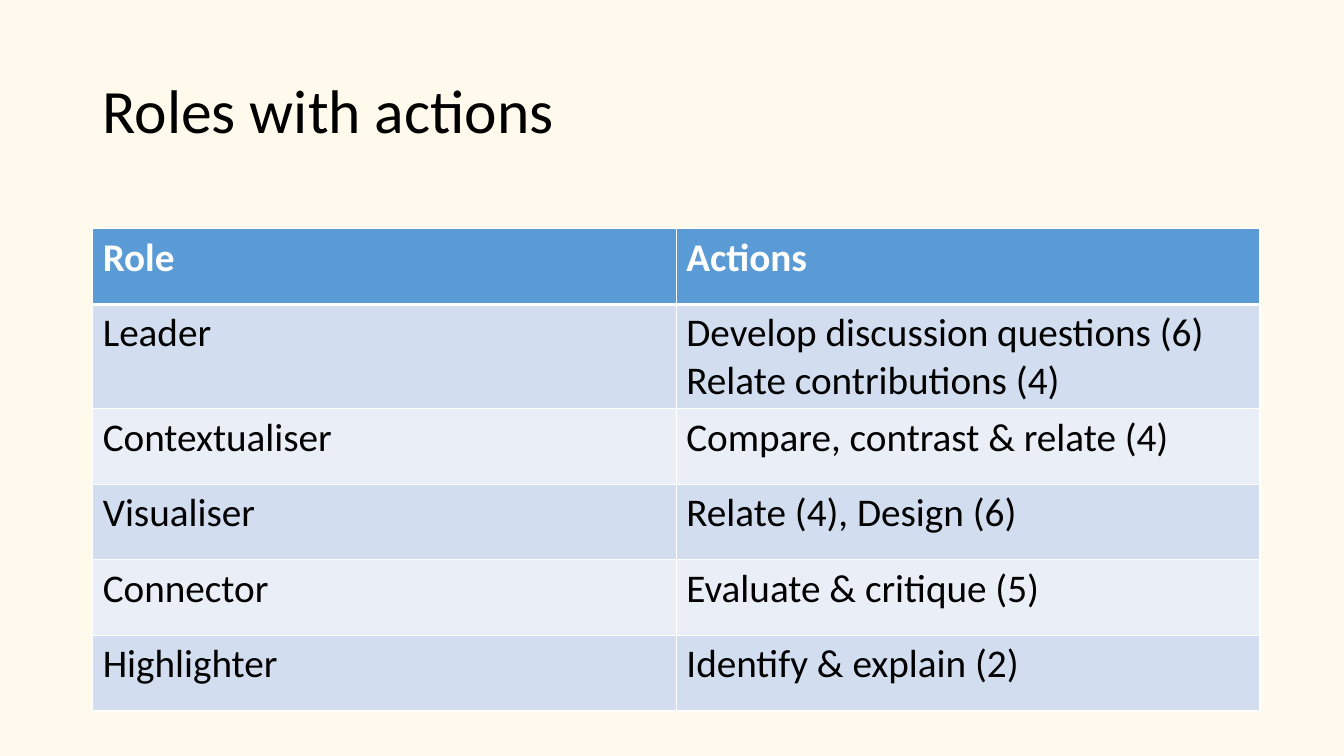
from pptx import Presentation
from pptx.dml.color import RGBColor as RGB
from pptx.enum.text import MSO_ANCHOR as Anchor
from pptx.oxml import parse_xml
from pptx.oxml.ns import nsdecls
from pptx.util import Pt

# Content
TITLE = "Roles with actions"
ROLES = [
    ("Role", "Actions"),
    ("Leader", "Develop discussion questions (6)\nRelate contributions (4)"),
    ("Contextualiser", "Compare, contrast & relate (4)"),
    ("Visualiser", "Relate (4), Design (6)"),
    ("Connector", "Evaluate & critique (5)"),
    ("Highlighter", "Identify & explain (2)"),
]


class Theme:
    font = "Calibri"
    title_size, table_size = 44, 28
    background, text = "FFFAEB", "000000"
    header_fill, header_text = "5B9BD5", "FFFFFF"
    bands = ("D2DEEF", "EAEFF7")
    border, thin, thick = "FFFFFF", 1, 3


# Layout in points
SLIDE_W, SLIDE_H = 960, 540
LEFT = 66.24
TITLE_TOP, TITLE_W, TITLE_H = 28.8, 828, 104.4
TABLE_TOP, COLUMN_W, ROW_H = 163.44, 416.88, 54


def style_text(frame, size, color, bold=False):
    for paragraph in frame.paragraphs:
        for run in paragraph.runs:
            run.font.name = Theme.font
            run.font.size = Pt(size)
            run.font.bold = bold
            run.font.color.rgb = RGB.from_string(color)


def add_borders(cell, top, bottom):
    widths = {"L": Theme.thin, "R": Theme.thin, "T": top, "B": bottom}
    for side, width in widths.items():
        cell._tc.get_or_add_tcPr().append(parse_xml(
            f'<a:ln{side} {nsdecls("a")} w="{Pt(width)}"><a:solidFill>'
            f'<a:srgbClr val="{Theme.border}"/></a:solidFill></a:ln{side}>'))


deck = Presentation()
deck.slide_width, deck.slide_height = Pt(SLIDE_W), Pt(SLIDE_H)
slide = deck.slides.add_slide(deck.slide_layouts[6])
slide.background.fill.solid()
slide.background.fill.fore_color.rgb = RGB.from_string(Theme.background)

# Title
title = slide.shapes.add_textbox(
    Pt(LEFT), Pt(TITLE_TOP), Pt(TITLE_W), Pt(TITLE_H)).text_frame
title.word_wrap = True
title.vertical_anchor = Anchor.MIDDLE
title.text = TITLE
title.paragraphs[0].line_spacing = 0.9
style_text(title, Theme.title_size, Theme.text)

# Roles table
columns = len(ROLES[0])
roles = slide.shapes.add_table(
    len(ROLES), columns, Pt(LEFT), Pt(TABLE_TOP),
    Pt(columns * COLUMN_W), Pt(len(ROLES) * ROW_H)).table

for r, entry in enumerate(ROLES):
    header = r == 0
    fill = Theme.header_fill if header else Theme.bands[(r - 1) % 2]
    color = Theme.header_text if header else Theme.text
    top = Theme.thick if r == 1 else Theme.thin
    bottom = Theme.thick if header else Theme.thin
    for c, words in enumerate(entry):
        cell = roles.cell(r, c)
        cell.text_frame.text = words
        style_text(cell.text_frame, Theme.table_size, color, header)
        add_borders(cell, top, bottom)
        cell.fill.solid()
        cell.fill.fore_color.rgb = RGB.from_string(fill)

deck.save("out.pptx")
